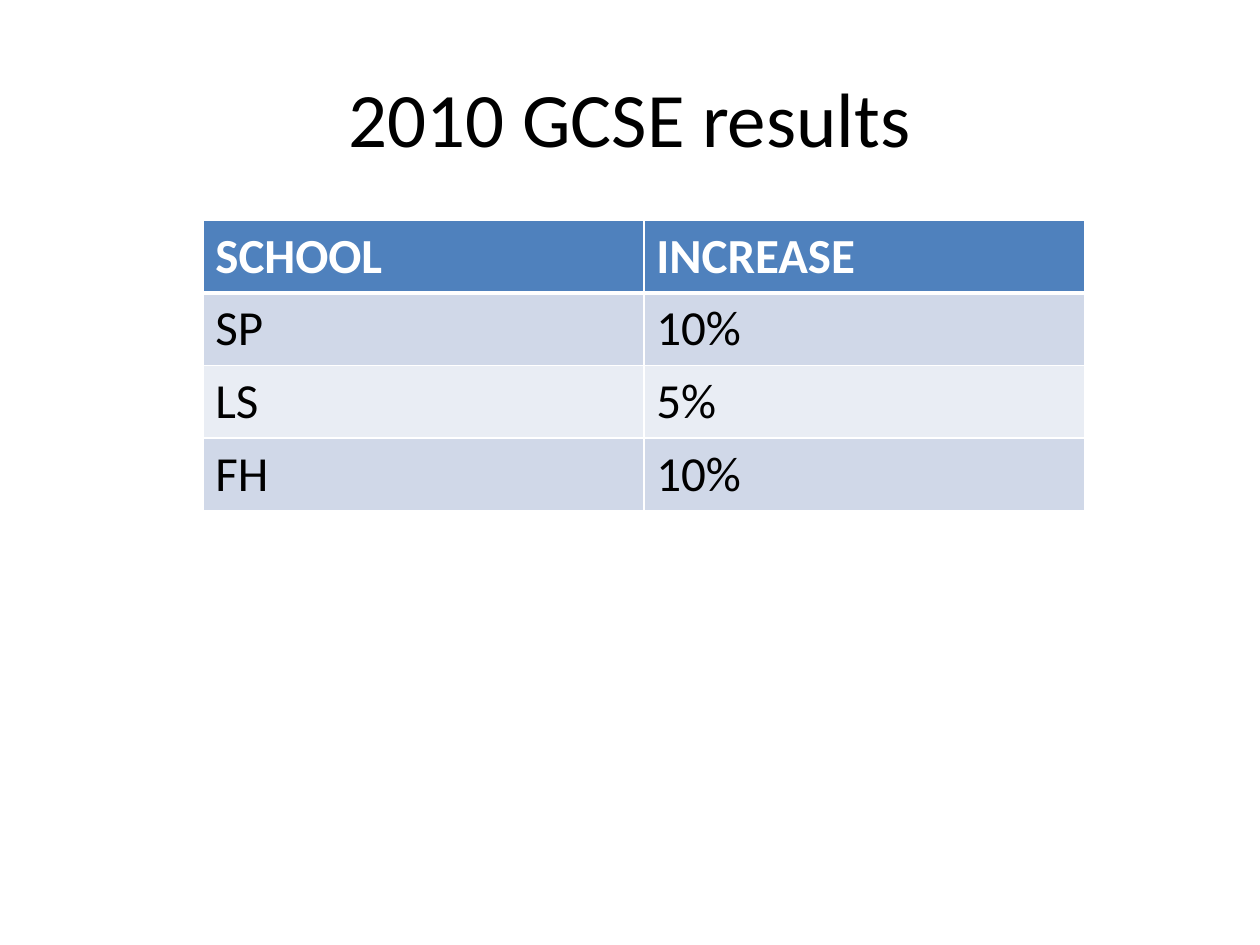
from lxml.etree import SubElement
from pptx import Presentation
from pptx.dml.color import RGBColor
from pptx.enum.text import MSO_ANCHOR, PP_ALIGN
from pptx.oxml.ns import qn
from pptx.util import Inches, Pt

FONT = "Calibri"
BLACK, WHITE, BLUE = "000000", "FFFFFF", "4F81BD"
BANDS = ("D0D8E8", "E9EDF4")
RESULTS = [
    ("SCHOOL", "INCREASE"),
    ("SP", "10%"),
    ("LS", "5%"),
    ("FH", "10%"),
]


def rgb(value):
    return RGBColor.from_string(value)


def add_run(p, text, size, color, bold=False):
    r = p.add_run()
    r.text = text
    r.font.name = FONT
    r.font.size = Pt(size)
    r.font.bold = bold
    r.font.color.rgb = rgb(color)


def set_borders(cell, color, bottom):
    """Draw 1 pt cell borders, with the bottom one in its own width."""
    tcPr = cell._tc.get_or_add_tcPr()
    for side, width in (("L", 1), ("R", 1), ("T", 1), ("B", bottom)):
        ln = SubElement(tcPr, qn(f"a:ln{side}"), w=str(Pt(width)))
        fill = SubElement(ln, qn("a:solidFill"))
        SubElement(fill, qn("a:srgbClr"), val=color)


def place_title(slide, text, box):
    sp = slide.shapes.title
    sp.left, sp.top, sp.width, sp.height = map(Inches, box)
    tf = sp.text_frame
    tf.vertical_anchor = MSO_ANCHOR.MIDDLE
    p = tf.paragraphs[0]
    p.alignment = PP_ALIGN.CENTER
    add_run(p, text, 44, BLACK)


def place_table(slide, rows, box):
    table = slide.shapes.add_table(len(rows), len(rows[0]), *map(Inches, box)).table
    for i, row in enumerate(rows):
        header = i == 0
        for j, text in enumerate(row):
            cell = table.cell(i, j)
            set_borders(cell, WHITE, 3 if header else 1)
            cell.fill.solid()
            cell.fill.fore_color.rgb = rgb(BLUE if header else BANDS[(i - 1) % 2])
            add_run(cell.text_frame.paragraphs[0], text, 28,
                    WHITE if header else BLACK, header)


def main():
    prs = Presentation()
    prs.slide_width, prs.slide_height = Inches(10), Inches(7.5)
    slide = prs.slides.add_slide(prs.slide_layouts[5])
    place_title(slide, "2010 GCSE results", (0.5, 0.3, 9, 1.25))
    place_table(slide, RESULTS, (1.61, 1.75, 7, 2.27))
    prs.save("out.pptx")


if __name__ == "__main__":
    main()
